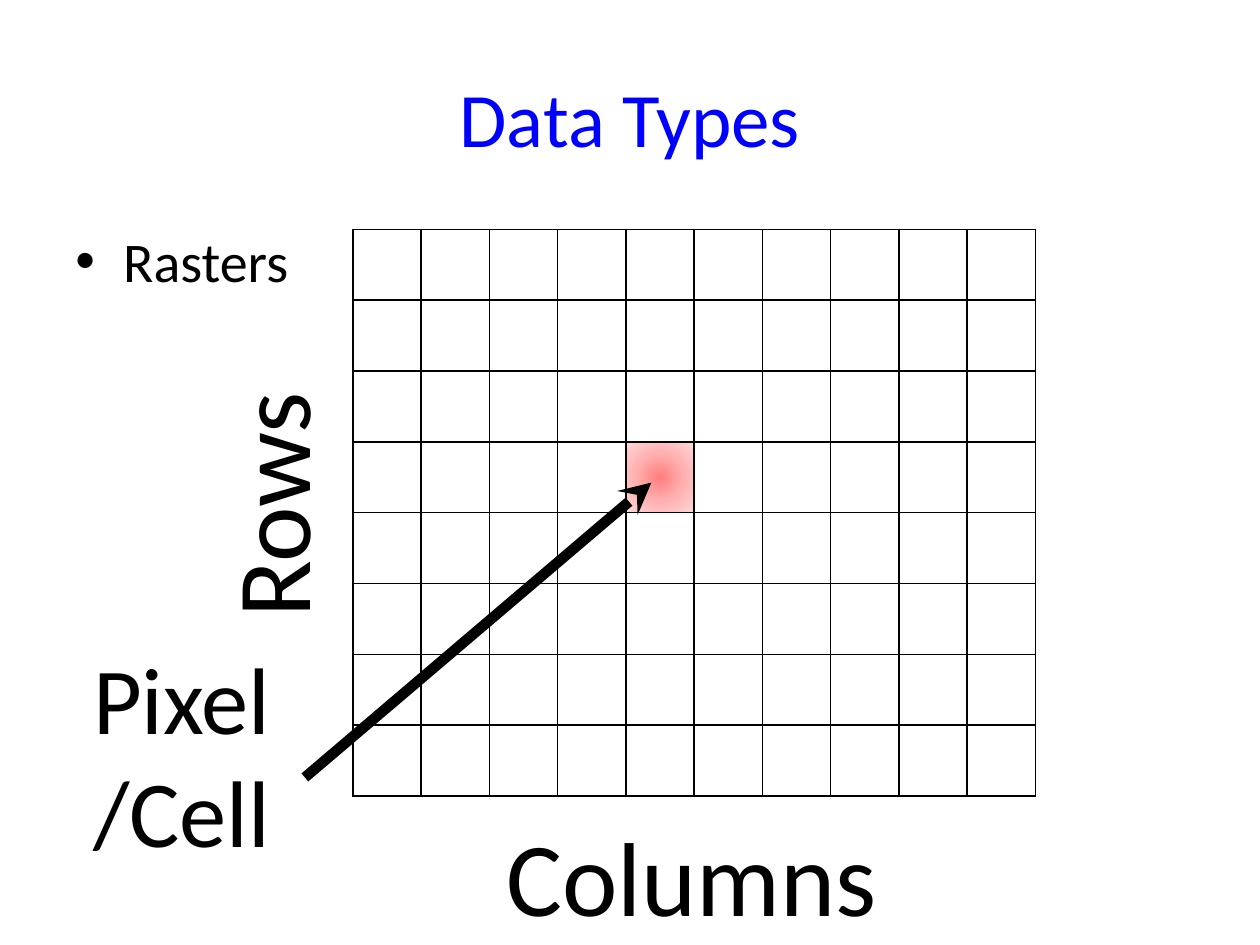
from dataclasses import dataclass
from itertools import product

from lxml.etree import SubElement
from pptx import Presentation
from pptx.dml.color import RGBColor as RGB
from pptx.enum.shapes import MSO_CONNECTOR as Conn
from pptx.enum.text import MSO_ANCHOR as Anchor, PP_ALIGN as Align
from pptx.oxml import parse_xml
from pptx.oxml.ns import nsdecls, qn
from pptx.util import Inches, Pt


@dataclass(frozen=True)
class Theme:
    """Colours, font and sizes used on the slide."""
    font: str = "Calibri"
    ink: str = "000000"
    title: str = "0000FF"
    cell: str = "FFFFFF"
    glow: tuple = ((0, "FF7E7E"), (50, "FFB1B1"), (100, "FFD9D9"))
    title_pt: int = 44
    body_pt: int = 32
    axis_pt: int = 60
    note_pt: int = 54
    grid_pt: int = 1
    arrow_pt: int = 6


T = Theme()
W, H = Inches(10), Inches(7.5)


def share(*percents):
    """Turn alternating x and y percentages of the slide into lengths."""
    return [round((H if i % 2 else W) * v / 100) for i, v in enumerate(percents)]


def add_text(s, box, text, *, size, color=T.ink, align=Align.LEFT,
             anchor=Anchor.TOP, rotation=0, indent=0):
    """Add a wrapped text box, bulleted when an indent is given."""
    sp = s.shapes.add_textbox(*box)
    sp.rotation = rotation
    tf = sp.text_frame
    tf.word_wrap, tf.vertical_anchor = True, anchor
    p = tf.paragraphs[0]
    p.alignment = align
    if indent:
        pPr = p._p.get_or_add_pPr()
        pPr.set("marL", str(indent))
        pPr.set("indent", str(-indent))
        SubElement(pPr, qn("a:buFont"), typeface="Arial")
        SubElement(pPr, qn("a:buChar"), char="•")
    r = p.add_run()
    r.text = text
    r.font.name, r.font.size = T.font, Pt(size)
    r.font.color.rgb = RGB.from_string(color)
    return sp


def add_title(s, box):
    """Place the centred slide title."""
    add_text(s, box, "Data Types", size=T.title_pt, color=T.title,
             align=Align.CENTER, anchor=Anchor.MIDDLE)


def add_body(s, box):
    """Place the bulleted topic."""
    add_text(s, box, "Rasters", size=T.body_pt, indent=Inches(0.38))


def set_borders(cell):
    """Draw a thin line on all four sides of a cell."""
    tcPr = cell._tc.get_or_add_tcPr()
    for side in "LRTB":
        tcPr.append(parse_xml(
            f'<a:ln{side} {nsdecls("a")} w="{Pt(T.grid_pt)}"><a:solidFill>'
            f'<a:srgbClr val="{T.ink}"/></a:solidFill></a:ln{side}>'))


def set_glow(cell):
    """Fill a cell with a gradient spreading from its centre."""
    stops = "".join(f'<a:gs pos="{pos * 1000}"><a:srgbClr val="{c}"/></a:gs>'
                    for pos, c in T.glow)
    cell._tc.get_or_add_tcPr().append(parse_xml(
        f'<a:gradFill {nsdecls("a")}><a:gsLst>{stops}</a:gsLst><a:path path="circle">'
        '<a:fillToRect l="50000" t="50000" r="50000" b="50000"/></a:path></a:gradFill>'))


def add_raster(s, box, rows, cols, pixel):
    """Place the raster grid with one highlighted pixel."""
    x, y, w, h = box
    table = s.shapes.add_table(rows, cols, x, y, w, h).table
    table.first_row = table.horz_banding = False
    for col in table.columns:
        col.width = round(w / cols)
    for row in table.rows:
        row.height = round(h / rows)
    for pos in product(range(rows), range(cols)):
        cell = table.cell(*pos)
        set_borders(cell)
        if pos == pixel:
            set_glow(cell)
        else:
            cell.fill.solid()
            cell.fill.fore_color.rgb = RGB.from_string(T.cell)


def add_labels(s, rows_box, cols_box, pixel_box):
    """Name the two axes and the highlighted pixel."""
    add_text(s, rows_box, "Rows", size=T.axis_pt, rotation=270)
    add_text(s, cols_box, "Columns", size=T.axis_pt)
    add_text(s, pixel_box, "Pixel /Cell", size=T.note_pt)


def add_pointer(s, ends):
    """Draw the arrow from the label to the pixel."""
    c = s.shapes.add_connector(Conn.STRAIGHT, *ends)
    c.line.width = Pt(T.arrow_pt)
    c.line.color.rgb = RGB.from_string(T.ink)
    SubElement(c.line._get_or_add_ln(), qn("a:tailEnd"), type="stealth")
    SubElement(c._element.spPr, qn("a:effectLst"))


def main():
    """Build and save the slide."""
    prs = Presentation()
    prs.slide_width, prs.slide_height = W, H
    s = prs.slides.add_slide(prs.slide_layouts[6])
    add_title(s, share(5, 4, 90, 16.67))
    add_body(s, share(5, 23.33, 90, 66))
    add_raster(s, share(28, 24.27, 54.2, 60), rows=8, cols=10, pixel=(3, 4))
    add_labels(s, rows_box=share(10.1, 44.27, 22.5, 14.8),
               cols_box=share(39.2, 85.2, 34, 14.8),
               pixel_box=share(6.4, 67.07, 20.5, 25.6))
    add_pointer(s, share(24.2, 82.27, 51.7, 51.07))
    prs.save("out.pptx")


if __name__ == "__main__":
    main()
